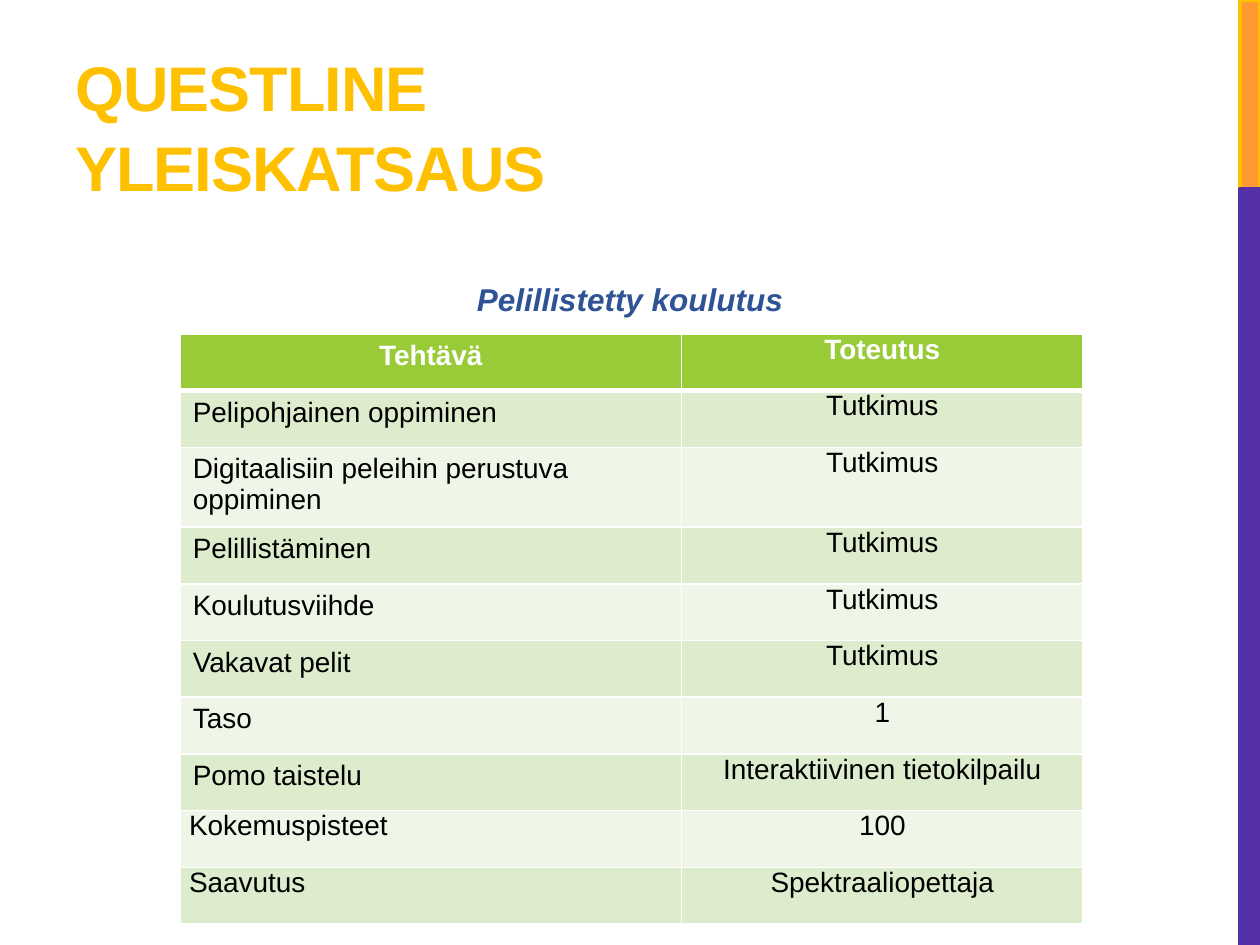
from pptx import Presentation
from pptx.dml.color import RGBColor
from pptx.enum.shapes import MSO_SHAPE
from pptx.enum.text import MSO_ANCHOR, PP_ALIGN
from pptx.oxml.ns import qn
from pptx.util import Pt
from lxml.etree import SubElement

FONT = "Arial"
COLORS = {
    "orange": "FF9933",
    "gold": "FFC000",
    "purple": "5330A5",
    "blue": "2F5496",
    "header": "99CB38",
    "band_dark": "DEECCE",
    "band_light": "EFF6E8",
    "white": "FFFFFF",
    "black": "000000",
}
ROWS = [
    ("Tehtävä", "Toteutus"),
    ("Pelipohjainen oppiminen", "Tutkimus"),
    ("Digitaalisiin peleihin perustuva oppiminen", "Tutkimus"),
    ("Pelillistäminen", "Tutkimus"),
    ("Koulutusviihde", "Tutkimus"),
    ("Vakavat pelit", "Tutkimus"),
    ("Taso", "1"),
    ("Pomo taistelu", "Interaktiivinen tietokilpailu"),
    ("Kokemuspisteet", "100"),
    ("Saavutus", "Spektraaliopettaja"),
]
FIRST_TIGHT_ROW = 8
ROW_HEIGHT = 32.4
FIRST_COLUMN_SHARE = 0.555


def color(name):
    return RGBColor.from_string(COLORS[name])


def style_font(paragraph, size, color_name, bold=False, italic=False):
    font = paragraph.font
    font.name = FONT
    font.size = Pt(size)
    font.bold = bold
    font.italic = italic
    font.color.rgb = color(color_name)


def add_side_bar(slide, left, top, width, height):
    split = height * 0.2
    parts = [
        (top, split, "orange", "gold"),
        (top + split, height - split, "purple", "purple"),
    ]
    for part_top, part_height, fill, line in parts:
        bar = slide.shapes.add_shape(
            MSO_SHAPE.RECTANGLE, Pt(left), Pt(part_top), Pt(width), Pt(part_height))
        bar.shadow.inherit = False
        bar.fill.solid()
        bar.fill.fore_color.rgb = color(fill)
        bar.line.color.rgb = color(line)
        bar.line.width = Pt(2.25)


def add_text(slide, left, top, width, height, text, anchor):
    box = slide.shapes.add_textbox(Pt(left), Pt(top), Pt(width), Pt(height))
    frame = box.text_frame
    frame.word_wrap = True
    frame.vertical_anchor = anchor
    paragraph = frame.paragraphs[0]
    paragraph.text = text
    return paragraph


def add_title(slide, left, top, width, height):
    paragraph = add_text(slide, left, top, width, height,
                         "QUESTLINE YLEISKATSAUS", MSO_ANCHOR.BOTTOM)
    paragraph.line_spacing = 1.05
    style_font(paragraph, 36, "gold", bold=True)
    paragraph.runs[0].font._element.set("spc", "-60")


def add_subtitle(slide, left, top, width, height):
    paragraph = add_text(slide, left, top, width, height,
                         "Pelillistetty koulutus", MSO_ANCHOR.TOP)
    paragraph.alignment = PP_ALIGN.CENTER
    paragraph.line_spacing = 1.5
    paragraph.space_after = Pt(6)
    style_font(paragraph, 18, "blue", bold=True, italic=True)


def set_borders(cell, top=1, bottom=1):
    properties = cell._tc.get_or_add_tcPr()
    for side, width in (("L", 1), ("R", 1), ("T", top), ("B", bottom)):
        line = SubElement(properties, qn(f"a:ln{side}"), w=str(Pt(width)))
        fill = SubElement(line, qn("a:solidFill"))
        SubElement(fill, qn("a:srgbClr"), val=COLORS["white"])


def fill_cell(cell, text, row, column):
    header = row == 0
    set_borders(cell, top=3 if row == 1 else 1, bottom=3 if header else 1)
    cell.fill.solid()
    band = "band_dark" if row % 2 else "band_light"
    cell.fill.fore_color.rgb = color("header" if header else band)
    if column == 1 or row >= FIRST_TIGHT_ROW:
        cell.margin_left = cell.margin_right = Pt(5)
        cell.margin_top = cell.margin_bottom = Pt(0)
    paragraph = cell.text_frame.paragraphs[0]
    paragraph.text = text
    centred = header or column == 1
    paragraph.alignment = PP_ALIGN.CENTER if centred else PP_ALIGN.LEFT
    style_font(paragraph, 16, "white" if header else "black", bold=header)


def add_task_table(slide, left, top, width):
    table = slide.shapes.add_table(
        len(ROWS), 2, Pt(left), Pt(top), Pt(width), Pt(ROW_HEIGHT * len(ROWS))).table
    table.columns[0].width = Pt(width * FIRST_COLUMN_SHARE)
    table.columns[1].width = Pt(width * (1 - FIRST_COLUMN_SHARE))
    for row, texts in enumerate(ROWS):
        table.rows[row].height = Pt(ROW_HEIGHT)
        for column, text in enumerate(texts):
            fill_cell(table.cell(row, column), text, row, column)


def main():
    presentation = Presentation()
    presentation.slide_width = Pt(720)
    presentation.slide_height = Pt(540)
    slide = presentation.slides.add_slide(presentation.slide_layouts[6])
    add_side_bar(slide, 708.5, 0, 11.5, 540)
    add_title(slide, 36, 12, 456, 108)
    add_task_table(slide, 103, 190.8, 516)
    add_subtitle(slide, 102, 145.4, 516, 36.7)
    presentation.save("out.pptx")


if __name__ == "__main__":
    main()
